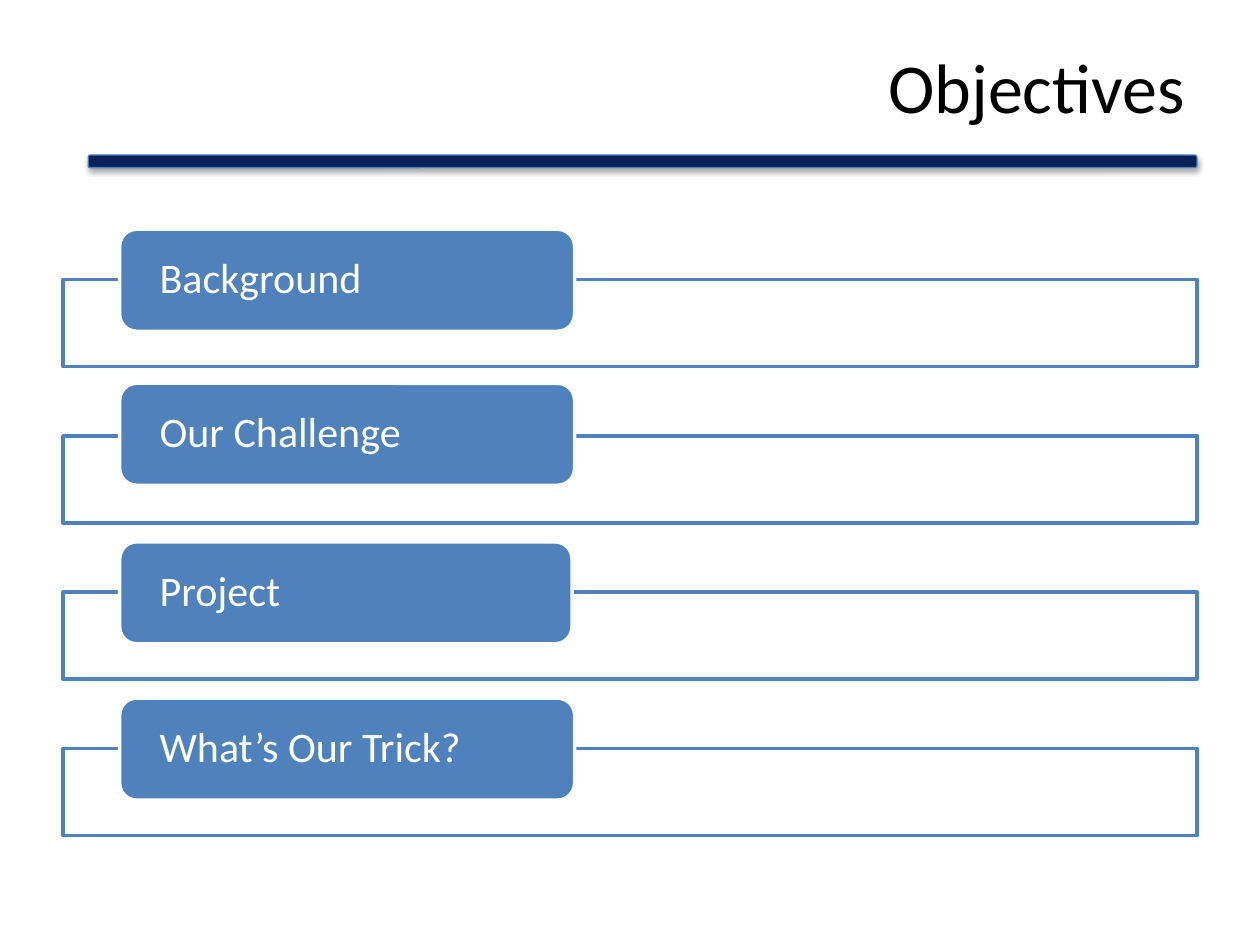
"""Build the Objectives slide with four labelled outline boxes."""
from lxml import etree
from pptx import Presentation
from pptx.dml.color import RGBColor
from pptx.enum.shapes import MSO_SHAPE
from pptx.enum.text import MSO_ANCHOR, PP_ALIGN
from pptx.oxml import parse_xml
from pptx.oxml.ns import nsdecls, qn
from pptx.util import Pt

RECTANGLE = MSO_SHAPE.RECTANGLE
ROUNDED = MSO_SHAPE.ROUNDED_RECTANGLE
TOP, MIDDLE = MSO_ANCHOR.TOP, MSO_ANCHOR.MIDDLE
LEFT, RIGHT = PP_ALIGN.LEFT, PP_ALIGN.RIGHT
BLUE, WHITE = "4F81BD", "FFFFFF"


def color(value):
    return RGBColor.from_string(value)


def add_box(kind, left, top, width, height, fill, line, line_width):
    shape = slide.shapes.add_shape(kind, Pt(left), Pt(top), Pt(width), Pt(height))
    shape.shadow.inherit = False
    shape.fill.solid()
    shape.fill.fore_color.rgb = color(fill)
    shape.line.color.rgb = color(line)
    shape.line.width = Pt(line_width)
    return shape


presentation = Presentation()
presentation.slide_width = Pt(720)
presentation.slide_height = Pt(540)
slide = presentation.slides.add_slide(presentation.slide_layouts[6])

bar = add_box(ROUNDED, 50.4, 88.6, 633.6, 7.2, "072058", "4B7EBC", 0.75)
effects = bar._element.spPr.find(qn("a:effectLst"))
effects.append(parse_xml(
    f'<a:outerShdw {nsdecls("a")} blurRad="{Pt(3.1)}" dist="{Pt(1.8)}" dir="5400000" '
    'rotWithShape="0"><a:srgbClr val="000000"><a:alpha val="35000"/></a:srgbClr></a:outerShdw>'))

title = slide.shapes.add_textbox(Pt(36), Pt(21.6), Pt(648), Pt(90))
title_frame = title.text_frame
title_frame.word_wrap = True
title_frame.vertical_anchor = TOP
title_frame.text = "Objectives"
paragraph = title_frame.paragraphs[0]
paragraph.alignment = RIGHT
font = paragraph.runs[0].font
font.name, font.size, font.color.rgb = "Calibri", Pt(40), color("000000")

objectives = [
    ("Background", 131, 260),
    ("Our Challenge", 219, 260),
    ("Project", 309.6, 258.5),
    ("What’s Our Trick?", 398.9, 260),
]
for index, (label, label_top, label_width) in enumerate(objectives):
    outline = add_box(RECTANGLE, 36, 159.8 + index * 89.3, 648, 49.7, WHITE, BLUE, 2)
    fill_color = outline._element.spPr.find(qn("a:solidFill"))[0]
    etree.SubElement(fill_color, qn("a:alpha")).set("val", "90000")

    tab = add_box(ROUNDED, 68.4, label_top, label_width, 58.3, BLUE, WHITE, 2)
    text_frame = tab.text_frame
    text_frame.word_wrap = True
    text_frame.vertical_anchor = MIDDLE
    text_frame.margin_left = text_frame.margin_right = Pt(20)
    text_frame.margin_top = text_frame.margin_bottom = Pt(0)
    text_frame.text = label
    paragraph = text_frame.paragraphs[0]
    paragraph.alignment = LEFT
    paragraph.line_spacing = 0.9
    font = paragraph.runs[0].font
    font.name, font.size, font.color.rgb = "Calibri", Pt(24), color(WHITE)

presentation.save("out.pptx")
